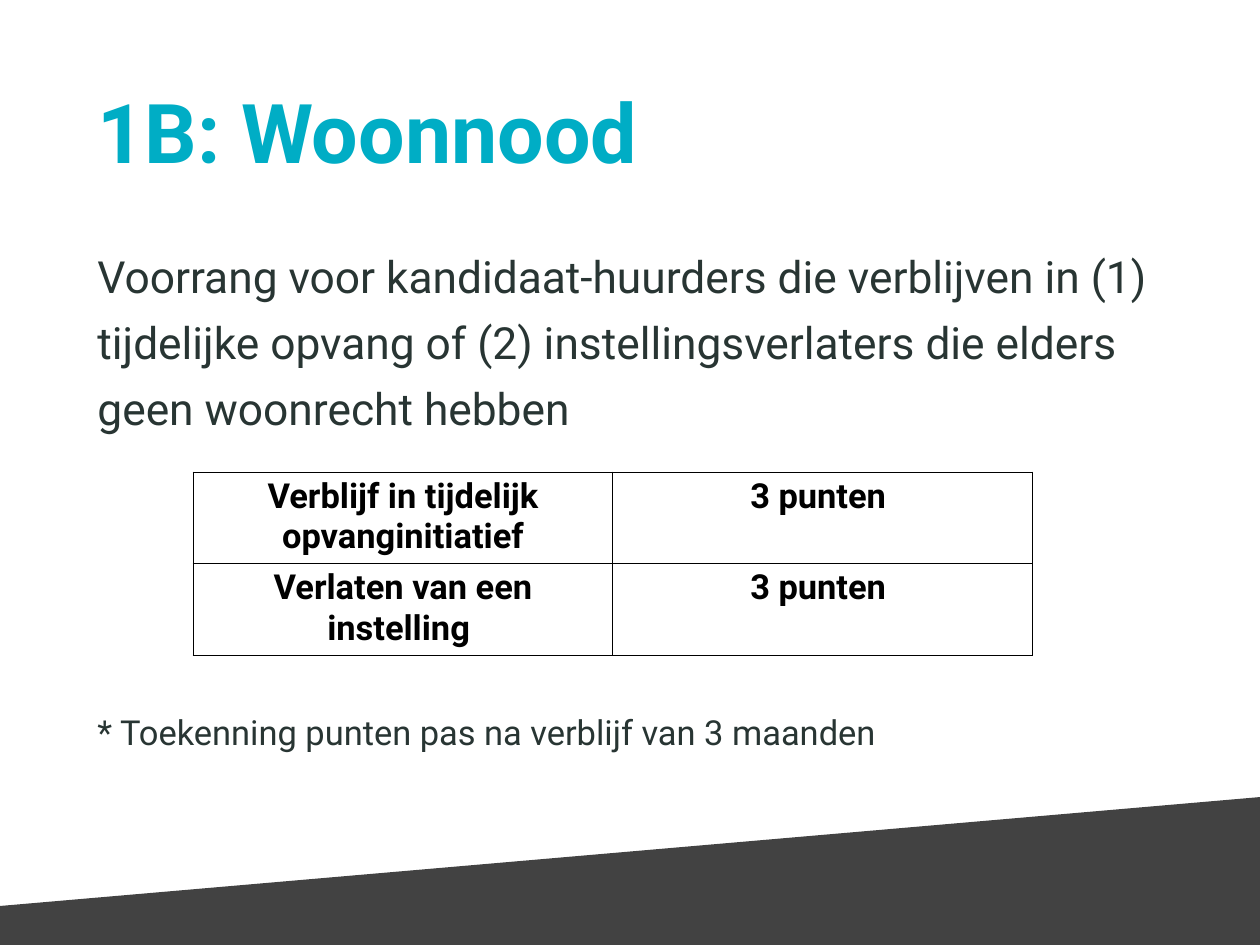
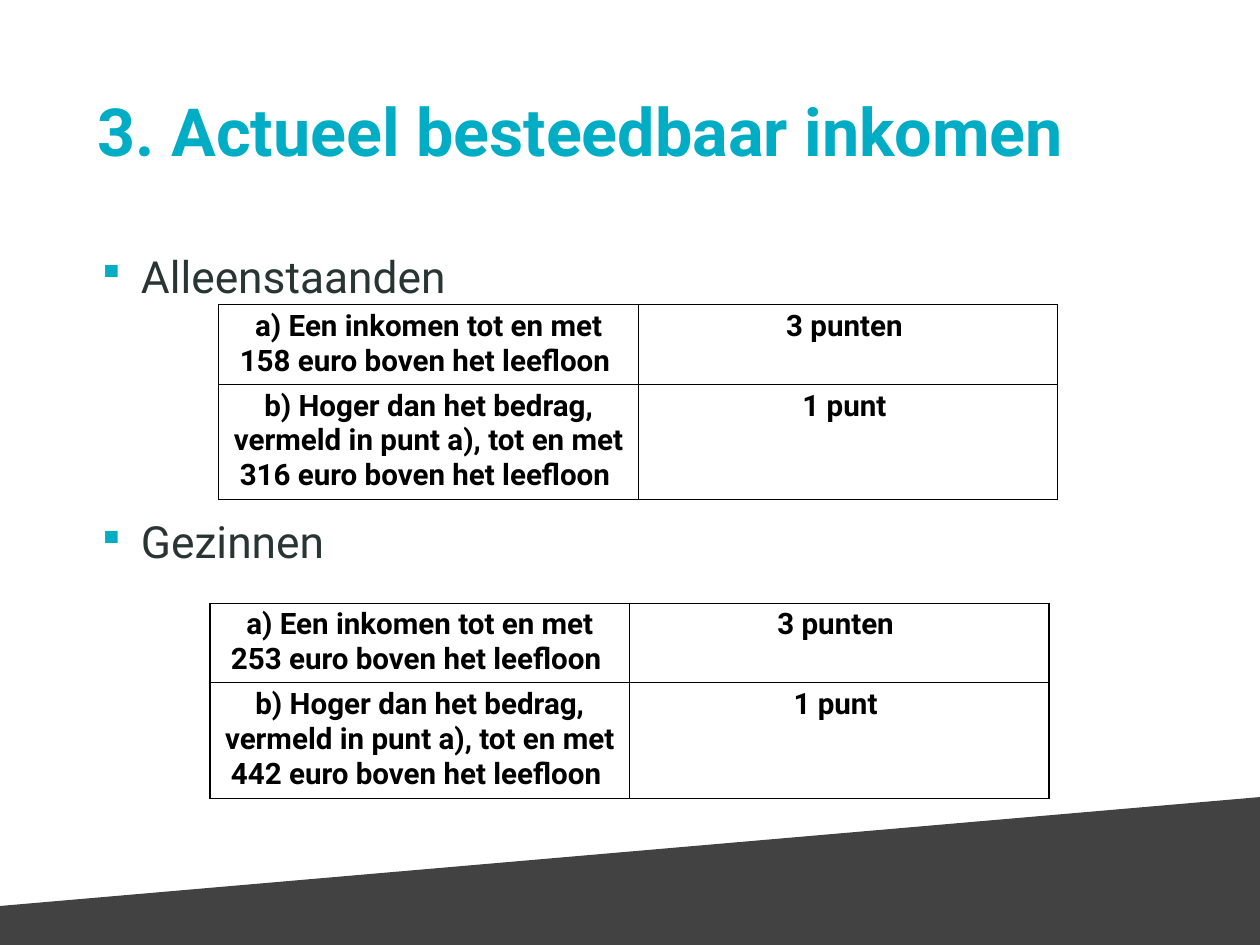
"""Build two slides on priority points for housing candidates."""
from lxml.etree import SubElement
from pptx import Presentation
from pptx.dml.color import RGBColor
from pptx.enum.text import MSO_ANCHOR, PP_ALIGN
from pptx.oxml import parse_xml
from pptx.oxml.ns import nsdecls, qn
from pptx.util import Inches, Pt

WIDTH, HEIGHT = 14.22, 10.67
LEFT, CONTENT_WIDTH = 1.04, 12.14
BODY_TOP, LINE = 2.6, 0.75
COLUMN = CONTENT_WIDTH * 0.39
FONT, TEAL, INK, BLACK, BAND = "Roboto", "00ADC5", "283533", "000000", "424242"
BAND_OUTLINE = [(0, 10.23), (WIDTH, 9), (WIDTH, HEIGHT), (0, HEIGHT)]


def style(paragraph, size, color, bold=False):
    paragraph.font.name = FONT
    paragraph.font.size = Pt(size)
    paragraph.font.bold = bold
    paragraph.font.color.rgb = RGBColor.from_string(color)


def add_text(slide, top, height, text, size, color, bold=False):
    box = slide.shapes.add_textbox(Inches(LEFT), Inches(top), Inches(CONTENT_WIDTH), Inches(height))
    frame = box.text_frame
    frame.word_wrap = True
    frame.margin_left = frame.margin_right = frame.margin_top = frame.margin_bottom = Inches(0.06)
    paragraph = frame.paragraphs[0]
    paragraph.text = text
    style(paragraph, size, color, bold)
    return frame


def income_rows(first, second):
    return [
        (f"a) Een inkomen tot en met {first} euro boven het leefloon ", "3 punten ", 2),
        (f"b) Hoger dan het bedrag, vermeld in punt a), tot en met {second} euro boven het leefloon ", "1 punt ", 3),
    ]


pages = [
    {
        "title": ("1B: Woonnood", 67),
        "texts": [
            (0, 3, 36, False, "Voorrang voor kandidaat-huurders die verblijven in (1) tijdelijke opvang "
                              "of (2) instellingsverlaters die elders geen woonrecht hebben"),
            (7, 1, 28, False, "* Toekenning punten pas na verblijf van 3 maanden"),
        ],
        "tables": [(2.18, 5.33, 28, [
            ("Verblijf in tijdelijk opvanginitiatief", "3 punten ", 2),
            ("Verlaten van een instelling ", "3 punten ", 2),
        ])],
    },
    {
        "title": ("3. Actueel besteedbaar inkomen", 54),
        "texts": [(0, 1, 36, True, "Alleenstaanden"), (4, 1, 36, True, "Gezinnen")],
        "tables": [
            (2.47, 3.44, 24, income_rows(158, 316)),
            (2.37, 6.81, 24, income_rows(253, 442)),
        ],
    },
]

presentation = Presentation()
presentation.slide_width, presentation.slide_height = Inches(WIDTH), Inches(HEIGHT)

for page in pages:
    slide = presentation.slides.add_slide(presentation.slide_layouts[6])

    corners = [(Inches(x), Inches(y)) for x, y in BAND_OUTLINE]
    builder = slide.shapes.build_freeform(*corners[0])
    builder.add_line_segments(corners[1:])
    band = builder.convert_to_shape()
    band.shadow.inherit = False
    band.fill.solid()
    band.fill.fore_color.rgb = RGBColor.from_string(BAND)
    band.line.fill.background()

    title, title_size = page["title"]
    frame = add_text(slide, 0.49, 1.96, title, title_size, TEAL, True)
    frame.vertical_anchor = MSO_ANCHOR.MIDDLE

    for row, lines, size, bulleted, text in page["texts"]:
        frame = add_text(slide, BODY_TOP + row * LINE, lines * LINE + 0.12, text, size, INK)
        paragraph = frame.paragraphs[0]
        paragraph.line_spacing = 1.25
        if bulleted:
            properties = paragraph._p.get_or_add_pPr()
            properties.set("marL", str(Inches(0.49)))
            properties.set("indent", str(-Inches(0.49)))
            bullet = parse_xml(
                f'<a:pPr {nsdecls("a")}><a:buClr><a:srgbClr val="{TEAL}"/></a:buClr>'
                '<a:buSzPct val="85000"/><a:buChar char="▪"/></a:pPr>')
            position = list(properties).index(properties.find(qn("a:lnSpc"))) + 1
            properties[position:position] = list(bullet)

    for left, top, size, rows in page["tables"]:
        heights = [0.1 + lines * size * 1.17 / 72 for _, _, lines in rows]
        graphic = slide.shapes.add_table(
            len(rows), 2, Inches(left), Inches(top), Inches(2 * COLUMN), Inches(sum(heights)))
        table = graphic.table
        table.first_row = table.horz_banding = False
        for column in table.columns:
            column.width = Inches(COLUMN)
        for row, height, (label, points, _) in zip(table.rows, heights, rows):
            row.height = Inches(height)
            for cell, text in zip(row.cells, (label, points)):
                cell.text = text
                paragraph = cell.text_frame.paragraphs[0]
                paragraph.alignment = PP_ALIGN.CENTER
                style(paragraph, size, BLACK, True)
                properties = cell._tc.get_or_add_tcPr()
                for side in ("lnL", "lnR", "lnT", "lnB"):
                    border = SubElement(properties, qn(f"a:{side}"), w=str(Pt(1)))
                    fill = SubElement(border, qn("a:solidFill"))
                    SubElement(fill, qn("a:srgbClr"), val=BLACK)
                cell.fill.background()

presentation.save("out.pptx")
